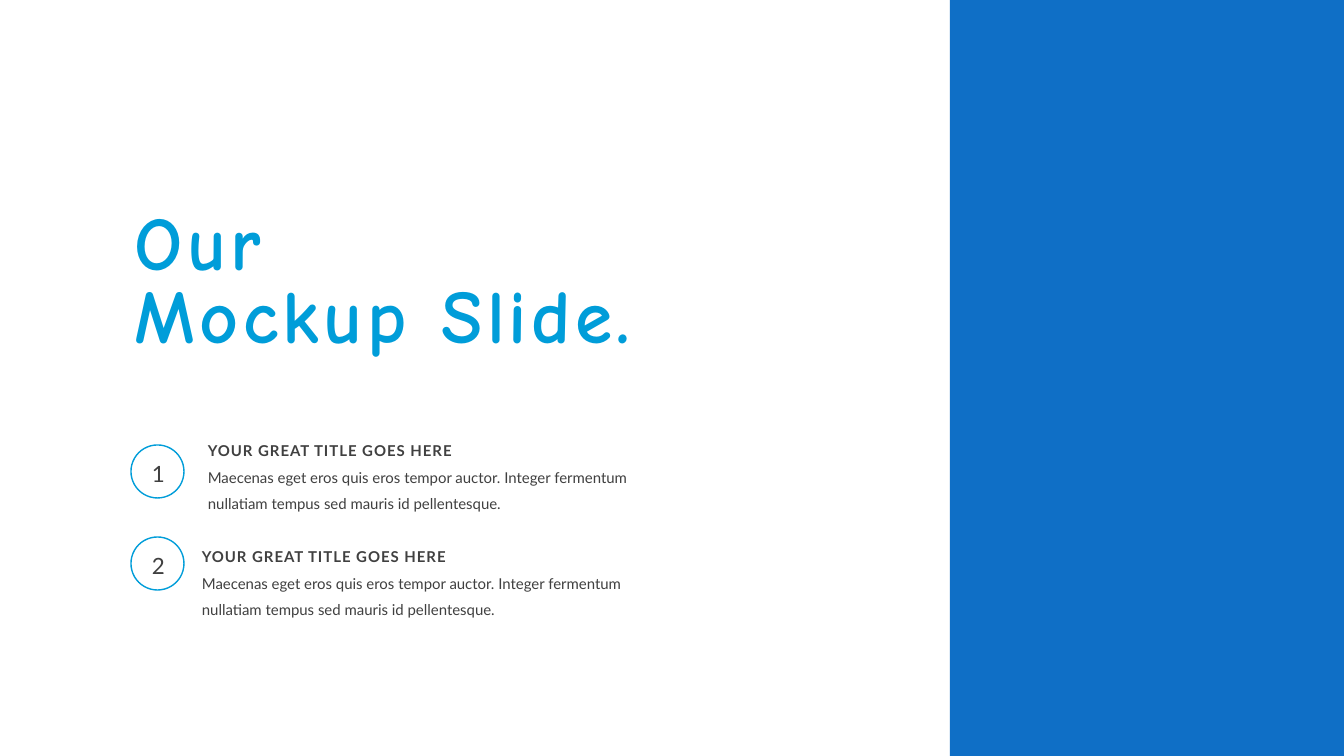
from pptx import Presentation
from pptx.dml.color import RGBColor
from pptx.enum.shapes import MSO_SHAPE
from pptx.enum.text import MSO_AUTO_SIZE, PP_ALIGN
from pptx.util import Emu, Pt

RECT, OVAL = MSO_SHAPE.RECTANGLE, MSO_SHAPE.OVAL
CENTER, LEFT = PP_ALIGN.CENTER, PP_ALIGN.LEFT
FIT_SHAPE = MSO_AUTO_SIZE.SHAPE_TO_FIT_TEXT
PX = 914400 / 100.8
COLORS = {"panel": "0F6FC6", "accent": "009DD9", "text": "404040"}

HEADING = "YOUR GREAT TITLE GOES HERE"
BODY = ("Maecenas eget eros quis eros tempor auctor. Integer fermentum "
        "nullatiam tempus sed mauris id pellentesque.")


def px(*lengths):
    return [Emu(round(n * PX)) for n in lengths]


def add_text(box, lines, font, color, size, line_spacing=None, align=LEFT):
    """Add a text box; each line is (text, bold, letter spacing in 1/100 pt)."""
    tf = s.shapes.add_textbox(*px(*box)).text_frame
    tf.word_wrap = True
    tf.auto_size = FIT_SHAPE
    for i, (text, bold, spacing) in enumerate(lines):
        p = tf.add_paragraph() if i else tf.paragraphs[0]
        p.text = text
        p.alignment = align
        p.line_spacing = line_spacing
        r = p.runs[0]
        r.font.name = font
        r.font.size = Pt(size)
        r.font.bold = bold
        r.font.color.rgb = RGBColor.from_string(COLORS[color])
        r.font._element.set("spc", str(spacing))


prs = Presentation()
prs.slide_width, prs.slide_height = px(1344, 756)
s = prs.slides.add_slide(prs.slide_layouts[6])

panel = s.shapes.add_shape(RECT, *px(950, 0, 394, 756))
panel.shadow.inherit = False
panel.fill.solid()
panel.fill.fore_color.rgb = RGBColor.from_string(COLORS["panel"])
panel.line.fill.background()

add_text((125, 208, 536, 157), [("Our", True, 300), ("Mockup Slide.", True, 300)],
         "Comic Neue", "accent", 54, 0.8)

# number, circle top, item text left and top
ITEMS = [("1", 445, 198, 428), ("2", 537, 192, 534)]
for number, top, text_left, text_top in ITEMS:
    circle = s.shapes.add_shape(OVAL, *px(131, top, 53, 53))
    circle.shadow.inherit = False
    circle.fill.background()
    circle.line.color.rgb = RGBColor.from_string(COLORS["accent"])
    circle.line.width = Pt(1)
    add_text((125, top + 10, 67, 37), [(number, False, 0)],
             "Lato", "text", 16, align=CENTER)
    add_text((text_left, text_top, 469, 91), [(HEADING, True, 70), (BODY, False, 0)],
             "Lato", "text", 10.7, Pt(19))

prs.save("out.pptx")
